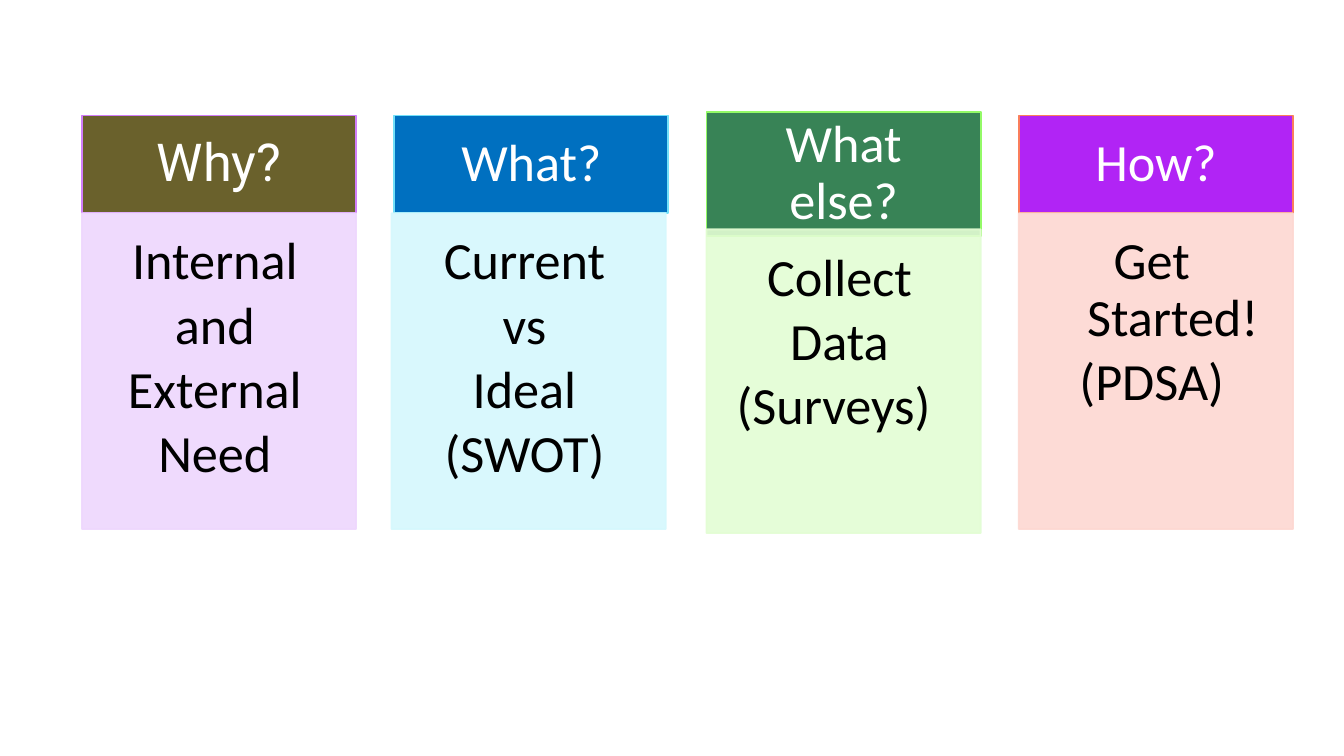
from lxml.etree import SubElement
from pptx import Presentation
from pptx.dml.color import RGBColor
from pptx.enum.shapes import MSO_SHAPE
from pptx.enum.text import MSO_ANCHOR, PP_ALIGN
from pptx.oxml.ns import qn
from pptx.util import Pt

COLORS = {
    "white": "FFFFFF", "black": "000000",
    "olive": "6A612C", "violet": "D17DF9", "lilac": "EED7FD",
    "blue": "0070C0", "cyan": "72E0F9", "ice": "D5F8FD",
    "green": "388356", "lime": "93FA67", "mint": "E3FDD4",
    "purple": "B124F5", "coral": "FA7E5C", "blush": "FDD8D2",
}

# heading, heading font, body lines, (heading fill, heading line, body fill)
CARDS = [
    ("Why?", "Roboto", ["Internal", "and", "External", "Need"],
     ("olive", "violet", "lilac")),
    ("What?", "Calibri", ["Current", "vs", "Ideal", "(SWOT)"],
     ("blue", "cyan", "ice")),
    ("What else?", "Calibri", ["Collect", "Data", "(Surveys) "],
     ("green", "lime", "mint")),
    ("How?", "Calibri", ["Get Started!", "(PDSA)"],
     ("purple", "coral", "blush")),
]

LEFT, STEP, WIDTH = 43.9, 167.3, 146.9
HEAD, BODY = (61.9, 52.1), (114.2, 169.2)            # top, height
TALL_HEAD, TALL_BODY = (60.2, 66.2), (122.9, 162.7)  # two-line heading
BODY_SHIFT = {1: -1.4}
SIZE = 28


def color(name):
    return RGBColor.from_string(COLORS[name])


def fade(shape, alpha):
    """Set the opacity of fill and line, in percent."""
    for tone in shape._element.spPr.iter(qn("a:srgbClr")):
        SubElement(tone, qn("a:alpha"), val=str(alpha * 1000))


def panel(slide, box, fill, line):
    shape = slide.shapes.add_shape(MSO_SHAPE.RECTANGLE, *map(Pt, box))
    shape.shadow.inherit = False
    shape.fill.solid()
    shape.fill.fore_color.rgb = color(fill)
    shape.line.color.rgb = color(line)
    shape.line.width = Pt(1)
    return shape


def write(shape, lines, tone="black", font="Calibri", anchor=MSO_ANCHOR.TOP,
          inset=(11.5, 11.5, 16, 17.3), after=0.15, hang=0):
    frame = shape.text_frame
    frame.word_wrap = True
    frame.vertical_anchor = anchor
    (frame.margin_left, frame.margin_top,
     frame.margin_right, frame.margin_bottom) = map(Pt, inset)
    for i, line in enumerate(lines):
        para = frame.paragraphs[0] if i == 0 else frame.add_paragraph()
        if hang:
            props = para._p.get_or_add_pPr()
            props.set("marL", str(Pt(hang)))
            props.set("indent", str(-Pt(hang)))
        para.alignment = PP_ALIGN.CENTER
        para.line_spacing = 0.9
        para.space_after = Pt(SIZE * after)
        run = para.add_run()
        run.text = line
        run.font.size = Pt(SIZE)
        run.font.name = font
        run.font.color.rgb = color(tone)


def main():
    deck = Presentation()
    deck.slide_width, deck.slide_height = Pt(720), Pt(405)
    slide = deck.slides.add_slide(deck.slide_layouts[6])

    for i, (title, font, lines, (fill, edge, pale)) in enumerate(CARDS):
        x = LEFT + i * STEP
        tall = " " in title
        top, height = TALL_HEAD if tall else HEAD
        head = panel(slide, (x, top, WIDTH, height), fill, edge)
        write(head, [title], tone="white", font=font, after=0.35,
              anchor=MSO_ANCHOR.MIDDLE, inset=(16, 8.6, 16, 8.6))

        top, height = TALL_BODY if tall else BODY
        x += BODY_SHIFT.get(i, 0)
        body = panel(slide, (x, top, WIDTH, height), pale, pale)
        fade(body, 90)
        write(body, lines, hang=22.5)

    deck.save("out.pptx")


if __name__ == "__main__":
    main()
